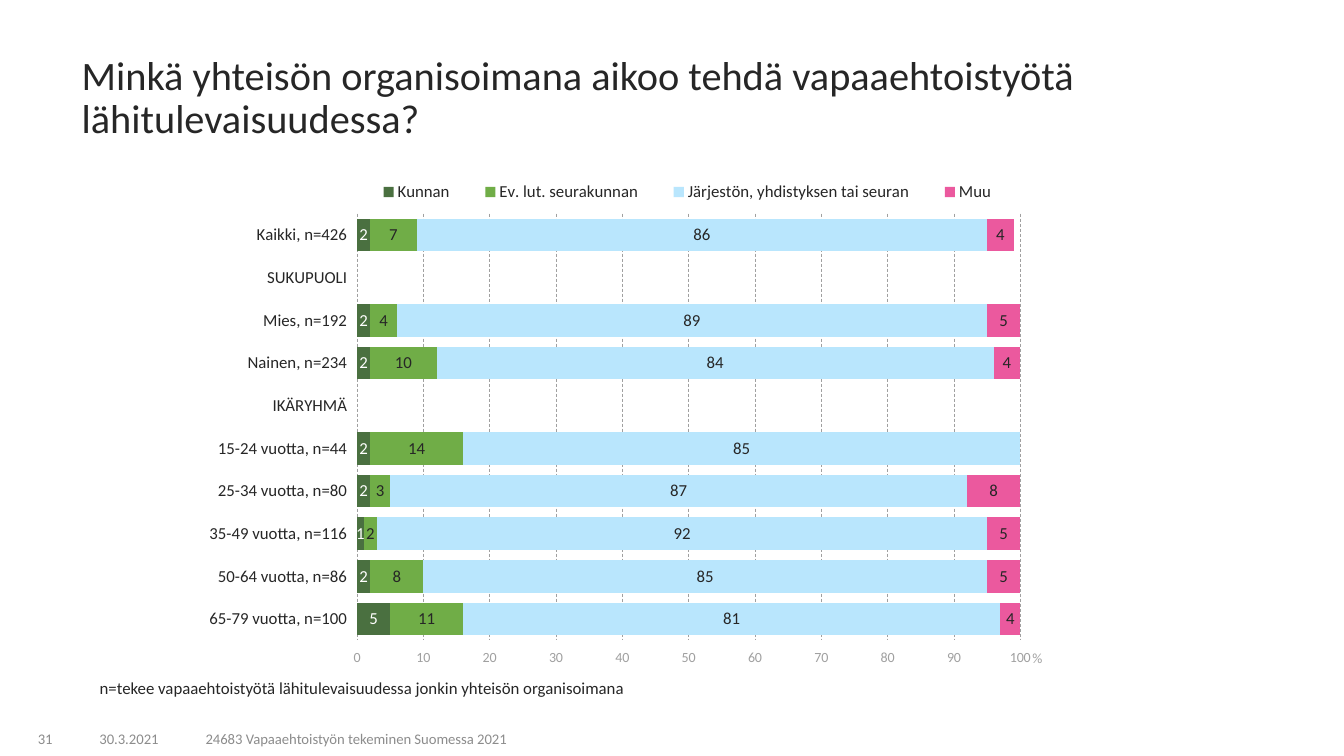
from lxml import etree
from pptx import Presentation
from pptx.chart.data import CategoryChartData
from pptx.dml.color import RGBColor
from pptx.enum.chart import (XL_CHART_TYPE as CHART_TYPE, XL_LABEL_POSITION as LABEL_POSITION,
                             XL_LEGEND_POSITION as LEGEND_POSITION,
                             XL_TICK_LABEL_POSITION as TICK_LABELS, XL_TICK_MARK as TICK_MARK)
from pptx.enum.dml import MSO_LINE
from pptx.enum.text import MSO_ANCHOR as ANCHOR, MSO_AUTO_SIZE as AUTO_SIZE, PP_ALIGN as ALIGN
from pptx.oxml.ns import qn
from pptx.util import Inches, Pt

DARK, FOOTER_GREY, AXIS_GREY, WHITE = "262626", "8C8C8C", "A0A0A0", "FFFFFF"

CATEGORIES = ["Kaikki, n=426", "SUKUPUOLI", "Mies, n=192", "Nainen, n=234", "IKÄRYHMÄ",
              "15-24 vuotta, n=44", "25-34 vuotta, n=80", "35-49 vuotta, n=116",
              "50-64 vuotta, n=86", "65-79 vuotta, n=100"]
SERIES = [  # name, fill, label colour, values
    ("Kunnan", "4A7040", WHITE, [2, None, 2, 2, None, 2, 2, 1, 2, 5]),
    ("Ev. lut. seurakunnan", "70AD47", DARK, [7, None, 4, 10, None, 14, 3, 2, 8, 11]),
    ("Järjestön, yhdistyksen tai seuran", "B9E6FD", DARK,
     [86, None, 89, 84, None, 85, 87, 92, 85, 81]),
    ("Muu", "EB599E", DARK, [4, None, 5, 4, None, None, 8, 5, 5, 4]),
]


def style_font(font, size, color):
    font.name, font.size, font.bold = "Calibri", Pt(size), False
    font.color.rgb = RGBColor.from_string(color)


def set_layout(parent, index, **settings):
    """Give a chart part a manual layout, in shares of the chart's size."""
    for old in parent.findall(qn("c:layout")):
        parent.remove(old)
    layout = etree.Element(qn("c:layout"))
    manual = etree.SubElement(layout, qn("c:manualLayout"))
    for tag, value in settings.items():
        etree.SubElement(manual, qn(f"c:{tag}")).set("val", str(value))
    parent.insert(index, layout)


presentation = Presentation()
presentation.slide_width, presentation.slide_height = Inches(13.33), Inches(7.5)
slide = presentation.slides.add_slide(presentation.slide_layouts[5])

# Title
title = slide.shapes.title
title.left, title.top, title.width, title.height = map(Inches, (0.71, 0.64, 12.07, 0.68))
frame = title.text_frame
frame.text = "Minkä yhteisön organisoimana aikoo tehdä vapaaehtoistyötä lähitulevaisuudessa?"
frame.auto_size, frame.vertical_anchor = AUTO_SIZE.NONE, ANCHOR.MIDDLE
paragraph = frame.paragraphs[0]
paragraph.alignment, paragraph.line_spacing = ALIGN.LEFT, 0.9
style_font(paragraph.font, 28.8, DARK)

# Stacked bar chart
chart_data = CategoryChartData()
chart_data.categories = CATEGORIES
for name, _, _, values in SERIES:
    chart_data.add_series(name, values)
chart = slide.shapes.add_chart(CHART_TYPE.BAR_STACKED, Inches(1.83), Inches(1.46),
                               Inches(8.6), Inches(5.24), chart_data).chart
chart.has_title = False
style_font(chart.font, 12, DARK)

plot = chart.plots[0]
plot.gap_width, plot.overlap, plot.vary_by_categories = 30, 100, False
for series, (_, fill, label_color, _) in zip(plot.series, SERIES):
    series.format.fill.solid()
    series.format.fill.fore_color.rgb = RGBColor.from_string(fill)
    labels = series.data_labels
    labels.show_value, labels.position = True, LABEL_POSITION.CENTER
    labels.number_format, labels.number_format_is_linked = "#,##0", False
    style_font(labels.font, 12, label_color)

category_axis, value_axis = chart.category_axis, chart.value_axis
for axis, size, color in ((category_axis, 12, DARK), (value_axis, 10, AXIS_GREY)):
    axis.major_tick_mark = axis.minor_tick_mark = TICK_MARK.NONE
    axis.format.line.fill.background()
    style_font(axis.tick_labels.font, size, color)
category_axis.reverse_order = True
category_axis.tick_label_position = TICK_LABELS.LOW
value_axis.tick_label_position = TICK_LABELS.HIGH  # below the reversed categories

value_axis.minimum_scale, value_axis.maximum_scale, value_axis.major_unit = 0, 100.01, 10
value_axis.tick_labels.number_format = "General"
value_axis.tick_labels.number_format_is_linked = False
grid_line = value_axis.major_gridlines.format.line
grid_line.color.rgb = RGBColor.from_string(AXIS_GREY)
grid_line.width, grid_line.dash_style = Pt(0.5), MSO_LINE.DASH
unit_frame = value_axis.axis_title.text_frame
unit_frame.text = "%"
style_font(unit_frame.paragraphs[0].font, 10, AXIS_GREY)

chart.has_legend = True
legend = chart.legend
legend.position, legend.include_in_layout = LEGEND_POSITION.TOP, False
style_font(legend.font, 12, DARK)

plot_area = chart.element.find(".//" + qn("c:plotArea"))
set_layout(plot_area, 0, layoutTarget="inner", xMode="edge", yMode="edge",
           x=0.199, y=0.126, w=0.765, h=0.808)
set_layout(plot_area.find(".//" + qn("c:title")), 1, xMode="edge", yMode="edge", x=0.975, y=0.945)
set_layout(chart.element.find(".//" + qn("c:legend")), 1, xMode="edge", yMode="edge",
           x=0.195, y=0.05, w=0.77, h=0.07)

# Note and footer
FOOTER_TOP, FOOTER_HEIGHT = 7.16, 0.3
for text, left, top, width, height, align, anchor, size, color, spacing in (
    ("n=tekee vapaaehtoistyötä lähitulevaisuudessa jonkin yhteisön organisoimana",
     0.89, 6.7, 5.92, 0.28, ALIGN.LEFT, ANCHOR.TOP, 12, DARK, 0.9),
    ("31", 0.03, FOOTER_TOP, 0.59, FOOTER_HEIGHT,
     ALIGN.RIGHT, ANCHOR.BOTTOM, 10.5, FOOTER_GREY, 1.0),
    ("30.3.2021", 0.66, FOOTER_TOP, 1.24, FOOTER_HEIGHT,
     ALIGN.CENTER, ANCHOR.BOTTOM, 10.5, FOOTER_GREY, 1.0),
    ("24683 Vapaaehtoistyön tekeminen Suomessa 2021", 1.94, FOOTER_TOP, 5.92, FOOTER_HEIGHT,
     ALIGN.LEFT, ANCHOR.BOTTOM, 10.5, FOOTER_GREY, 1.0),
):
    frame = slide.shapes.add_textbox(*map(Inches, (left, top, width, height))).text_frame
    frame.word_wrap, frame.vertical_anchor, frame.text = True, anchor, text
    paragraph = frame.paragraphs[0]
    paragraph.alignment, paragraph.line_spacing = align, spacing
    style_font(paragraph.font, size, color)

presentation.save("out.pptx")
